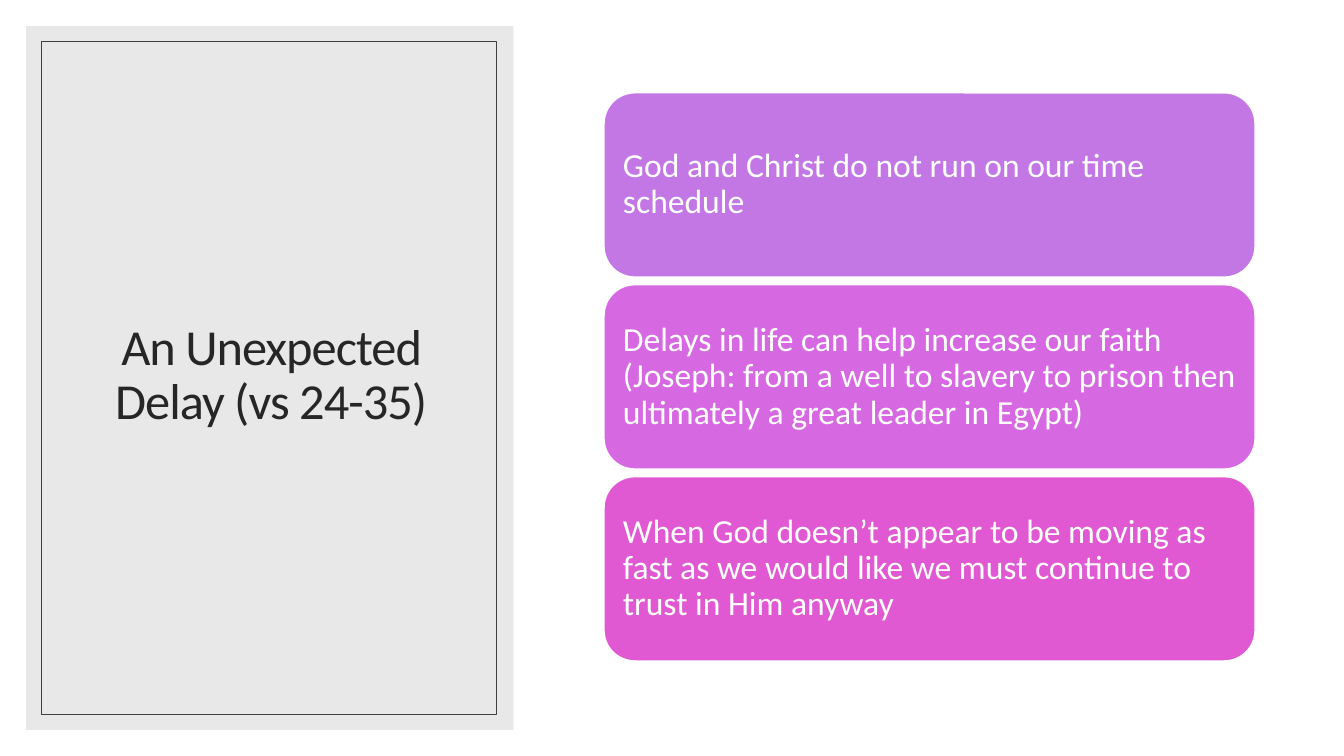
from dataclasses import dataclass

from lxml.etree import SubElement
from pptx import Presentation
from pptx.dml.color import RGBColor
from pptx.enum.shapes import MSO_SHAPE
from pptx.enum.text import MSO_ANCHOR, PP_ALIGN
from pptx.oxml.ns import qn
from pptx.util import Pt


@dataclass(frozen=True)
class Theme:
    font: str = "Calibri"
    title_size: int = 36
    card_size: int = 24
    white: str = "FFFFFF"
    panel: str = "D9D9D9"
    title: str = "262626"
    frame: str = "404040"
    cards: tuple = ("C377E5", "D668E2", "E059D2")


class SlideBuilder:
    def __init__(self, page, theme):
        self.page = page
        self.theme = theme

    def shape(self, kind, area, fill=None, line=None, line_width=1, opacity=None):
        box = self.page.shapes.add_shape(kind, *map(Pt, area))
        box.shadow.inherit = False
        if fill:
            box.fill.solid()
            box.fill.fore_color.rgb = RGBColor.from_string(fill)
        else:
            box.fill.background()
        if opacity is not None:
            color = box.element.find(".//" + qn("a:srgbClr"))
            SubElement(color, qn("a:alpha"), val=str(opacity * 1000))
        if line:
            box.line.color.rgb = RGBColor.from_string(line)
            box.line.width = Pt(line_width)
        else:
            box.line.fill.background()
        return box

    def label(self, box, text, size, color, align, inset=7.2, space_after=0, tracking=0):
        frame = box.text_frame
        margin = Pt(inset)
        frame_format = {
            "word_wrap": True, "vertical_anchor": MSO_ANCHOR.MIDDLE,
            "margin_left": margin, "margin_right": margin,
            "margin_top": margin, "margin_bottom": margin,
        }
        para = frame.paragraphs[0]
        para_format = {"alignment": align, "line_spacing": 0.9, "space_after": Pt(space_after)}
        span = para.add_run()
        span.text = text
        span_format = {"name": self.theme.font, "size": Pt(size)}
        for target, values in ((frame, frame_format), (para, para_format), (span.font, span_format)):
            for name, value in values.items():
                setattr(target, name, value)
        span.font.color.rgb = RGBColor.from_string(color)
        if tracking:
            box.element.find(".//" + qn("a:rPr")).set("spc", str(round(tracking * 100)))

    def title(self, area, text):
        box = self.page.shapes.add_textbox(*map(Pt, area))
        self.label(box, text, self.theme.title_size, self.theme.title,
                   PP_ALIGN.CENTER, tracking=-0.7)

    def card(self, area, text, fill):
        box = self.shape(MSO_SHAPE.ROUNDED_RECTANGLE, area, fill, self.theme.white)
        size = self.theme.card_size
        self.label(box, text, size, self.theme.white, PP_ALIGN.LEFT, space_after=size * 0.35)


def main():
    deck = Presentation()
    deck.slide_width, deck.slide_height = Pt(960), Pt(540)
    theme = Theme()
    builder = SlideBuilder(deck.slides.add_slide(deck.slide_layouts[6]), theme)

    # Background and title panel
    builder.shape(MSO_SHAPE.RECTANGLE, (0, 0, 960, 540), theme.white)
    builder.shape(MSO_SHAPE.RECTANGLE, (18.7, 18.7, 348, 502.6), theme.panel, opacity=60)
    builder.title((45.4, 44, 296.6, 449.3), "An Unexpected Delay (vs 24-35)")
    builder.shape(MSO_SHAPE.RECTANGLE, (29.5, 29.5, 324.7, 481),
                  line=theme.frame, line_width=0.5)

    # Column of lesson cards
    lessons = (
        "God and Christ do not run on our time schedule",
        "Delays in life can help increase our faith (Joseph: from a well to slavery "
        "to prison then ultimately a great leader in Egypt)",
        "When God doesn’t appear to be moving as fast as we would like we must "
        "continue to trust in Him anyway",
    )
    left, top, width, height, gap = 431.5, 66.3, 465, 131.6, 5.5
    for index, (text, fill) in enumerate(zip(lessons, theme.cards)):
        builder.card((left, top + index * (height + gap), width, height), text, fill)

    deck.save("out.pptx")


if __name__ == "__main__":
    main()
